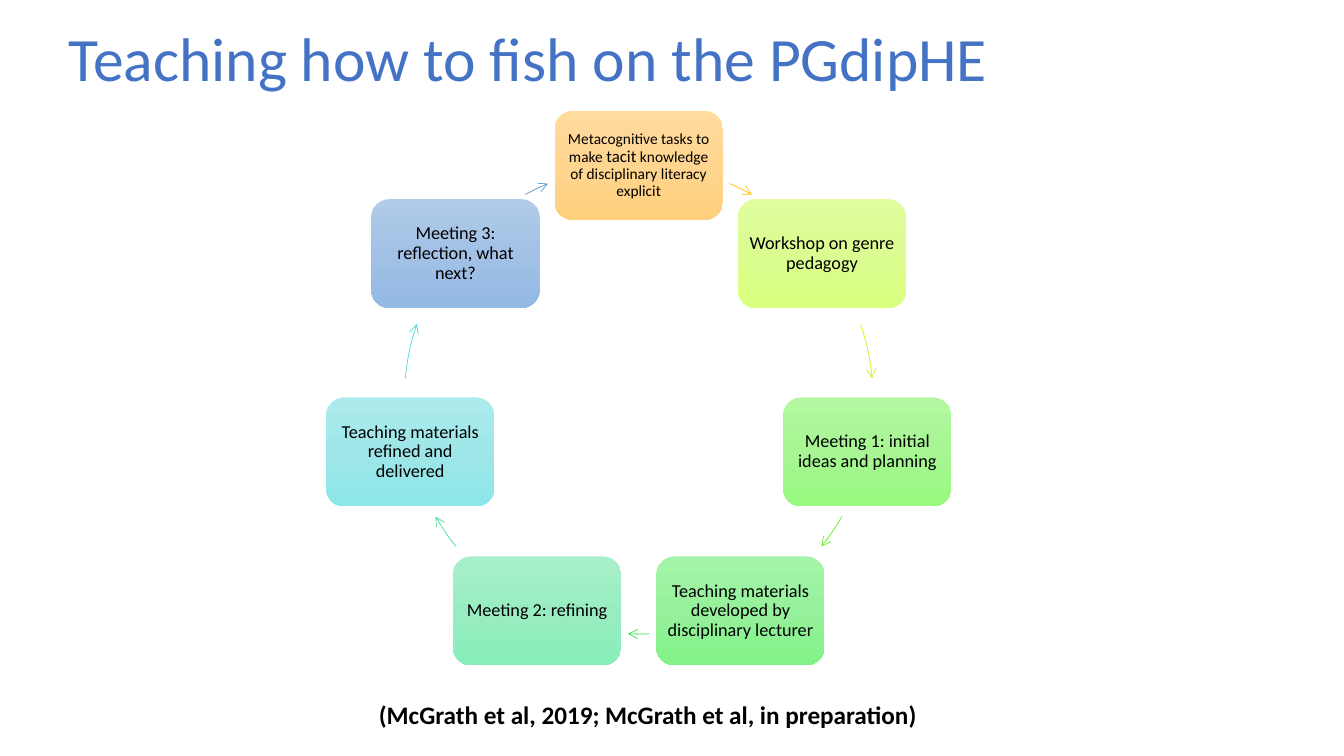
from copy import deepcopy
from dataclasses import dataclass
from math import cos, radians, sin

from lxml.etree import SubElement as Sub
from pptx import Presentation
from pptx.dml.color import RGBColor as Rgb
from pptx.enum.shapes import MSO_SHAPE as Kind
from pptx.enum.text import MSO_ANCHOR as Anchor, MSO_AUTO_SIZE as Fit, PP_ALIGN as Align
from pptx.oxml.ns import qn
from pptx.slide import Slide
from pptx.text.text import TextFrame as Frame
from pptx.util import Inches, Pt


@dataclass(frozen=True)
class Theme:
    font: str = "Calibri"
    ink: str = "000000"
    blue: str = "4472C4"
    head: int = 44
    note: int = 18
    body: int = 13
    small: int = 11
    term: int = 12
    line: float = 0.5


@dataclass(frozen=True)
class Step:
    runs: tuple[tuple[str, int], ...]
    shades: tuple[str, str, str]
    arrow: str
    start: float
    end: float


LOOK = Theme()
RING_X, RING_Y, RING = Inches(4.01), Inches(1.64), Inches(4.65)
BOX_W, BOX_H = Inches(1.67), Inches(1.08)
BITS = 8

STEPS = (
    Step((("Metacognitive tasks to make ", LOOK.small), ("tacit", LOOK.term),
          (" knowledge of disciplinary literacy explicit", LOOK.small)),
         ("FFDB9E", "FFD590", "FFD07C"), "FFC000", 22.8, 28.9),
    Step((("Workshop on genre pedagogy", LOOK.body),),
         ("E1FD9F", "DBFC91", "D9FF7D"), "C7F711", 71.2, 84.8),
    Step((("Meeting 1: initial ideas and planning", LOOK.body),),
         ("B3F8A1", "A7F693", "98FA7E"), "67EF21", 119.9, 128.8),
    Step((("Teaching materials developed by disciplinary lecturer", LOOK.body),),
         ("A4F4A9", "96F19B", "82F388"), "30E845", 177.4, 182.6),
    Step((("Meeting 2: refining", LOOK.body),),
         ("A8F0CA", "99ECC1", "86EEB9"), "3FE19B", 231.2, 240.1),
    Step((("Teaching materials refined and delivered", LOOK.body),),
         ("ACEBED", "9EE6E8", "8CE6E9"), "4DD8DB", 275.2, 288.8),
    Step((("Meeting 3: reflection, what next?", LOOK.body),),
         ("B1CBE9", "A3C1E5", "93B9E4"), "5B9BD5", 331.1, 337.2),
)


def write(frame: Frame, runs: tuple[tuple[str, int], ...], *, color: str = LOOK.ink,
          bold: bool = False, align: Align = Align.LEFT, anchor: Anchor = Anchor.MIDDLE,
          space: float = 0.9, inset: float | None = None) -> None:
    frame.word_wrap = True
    frame.auto_size = Fit.NONE
    frame.vertical_anchor = anchor
    if inset is not None:
        frame.margin_left = frame.margin_right = Inches(inset)
        frame.margin_top = frame.margin_bottom = Inches(inset)
    para = frame.paragraphs[0]
    para.alignment = align
    para.line_spacing = space
    for text, size in runs:
        run = para.add_run()
        run.text = text
        run.font.name = LOOK.font
        run.font.size = Pt(size)
        run.font.bold = bold
        run.font.color.rgb = Rgb.from_string(color)


def spot(angle: float) -> tuple[int, int]:
    turn, reach = radians(angle), RING / 2
    return round(RING_X + reach * (1 + sin(turn))), round(RING_Y + reach * (1 - cos(turn)))


def add_box(slide: Slide, step: Step, angle: float) -> None:
    x, y = spot(angle)
    box = slide.shapes.add_shape(Kind.ROUNDED_RECTANGLE, x - BOX_W // 2, y - BOX_H // 2, BOX_W, BOX_H)
    box.shadow.inherit = False
    box.line.fill.background()
    box.fill.gradient()
    box.fill.gradient_angle = 270
    first = box._element.spPr.find(".//" + qn("a:gs"))
    first.addnext(deepcopy(first))
    for stop, shade, place in zip(box.fill.gradient_stops, step.shades, (0, 0.5, 1)):
        stop.position = place
        stop.color.rgb = Rgb.from_string(shade)
    write(box.text_frame, step.runs, align=Align.CENTER, inset=0.05)


def add_arc(slide: Slide, step: Step) -> None:
    sweep = step.end - step.start
    dots = [spot(step.start + sweep * i / BITS) for i in range(BITS + 1)]
    pen = slide.shapes.build_freeform(*dots[0])
    pen.add_line_segments(dots[1:], close=False)
    arc = pen.convert_to_shape()
    track = arc._element.spPr.find(".//" + qn("a:path"))
    for side in ("w", "h"):
        track.set(side, str(RING))
    for point, (x, y) in zip(track.iter(qn("a:pt")), dots):
        point.set("x", str(x - RING_X))
        point.set("y", str(y - RING_Y))
    arc.left, arc.top, arc.width, arc.height = RING_X, RING_Y, RING, RING
    arc.shadow.inherit = False
    arc.fill.background()
    arc.line.color.rgb = Rgb.from_string(step.arrow)
    arc.line.width = Pt(LOOK.line)
    Sub(arc.line._get_or_add_ln(), qn("a:tailEnd"), type="arrow")


def main() -> None:
    deck = Presentation()
    deck.slide_width, deck.slide_height = Inches(13.33), Inches(7.5)
    slide = deck.slides.add_slide(deck.slide_layouts[5])

    title = slide.shapes.title
    title.left, title.top = Inches(0.58), Inches(0)
    title.width, title.height = Inches(11.5), Inches(1.23)
    write(title.text_frame, (("Teaching how to fish on the PGdipHE", LOOK.head),), color=LOOK.blue)

    for i, step in enumerate(STEPS):
        add_box(slide, step, 360 * i / len(STEPS))
        add_arc(slide, step)

    note = slide.shapes.add_textbox(Inches(3.66), Inches(6.89), Inches(7.87), Inches(0.4))
    write(note.text_frame, (("(McGrath et al, 2019; McGrath et al, in preparation)", LOOK.note),),
          bold=True, anchor=Anchor.TOP, space=1.0)

    deck.save("out.pptx")


if __name__ == "__main__":
    main()
